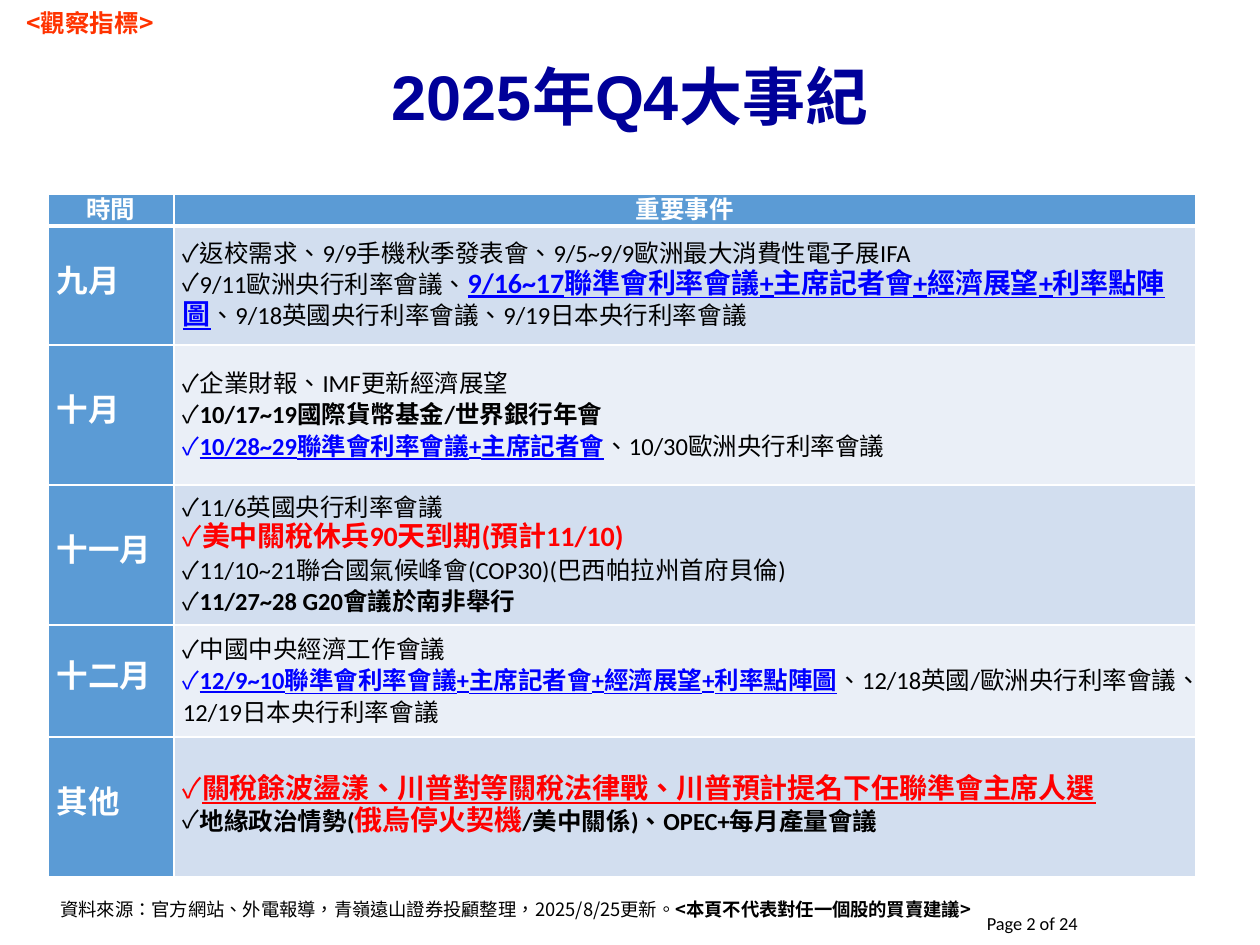
from lxml.etree import SubElement
from pptx import Presentation
from pptx.dml.color import RGBColor
from pptx.enum.text import MSO_ANCHOR, MSO_AUTO_SIZE, PP_ALIGN
from pptx.oxml import parse_xml
from pptx.oxml.ns import nsdecls, qn
from pptx.util import Emu, Pt

HAN, LATIN = "Noto Sans CJK SC", "Calibri"
WHITE, BLACK, BLUE, RED = "FFFFFF", "000000", "0000FF", "FF0000"
HEAD, BANDS = "5B9BD5", ("D2DEEF", "EAEFF7")

# Run looks: size, colour, bold, underline, font
LOOKS = {
    "plain": (14, BLACK, False, False, LATIN),
    "bold": (14, BLACK, True, False, LATIN),
    "blue": (14, BLUE, True, True, LATIN),
    "big blue": (16, BLUE, True, True, LATIN),
    "red": (16, RED, True, False, LATIN),
    "red line": (16, RED, True, True, LATIN),
    "head": (14, WHITE, True, False, HAN),
    "month": (18, WHITE, True, False, HAN),
    "title": (36, "000099", True, False, "Arial"),
    "tag": (14, "FF3300", True, False, HAN),
    "note": (10.5, BLACK, False, False, HAN),
    "note bold": (10.5, BLACK, True, False, HAN),
    "page": (10.5, BLACK, False, False, LATIN),
}

# Each month: name, row height, lines made of (text, look) runs
MONTHS = [
    ("九月", 119, [
        [("返校需求、9/9手機秋季發表會、9/5~9/9歐洲最大消費性電子展IFA", "plain")],
        [("9/11歐洲央行利率會議、", "plain"),
         ("9/16~17聯準會利率會議+主席記者會+經濟展望+利率點陣圖", "big blue"),
         ("、9/18英國央行利率會議、9/19日本央行利率會議", "plain")],
    ]),
    ("十月", 140, [
        [("企業財報、IMF更新經濟展望", "plain")],
        [("10/17~19國際貨幣基金/世界銀行年會", "bold")],
        [("10/28~29聯準會利率會議+主席記者會", "blue"),
         ("、10/30歐洲央行利率會議", "plain")],
    ]),
    ("十一月", 140, [
        [("11/6英國央行利率會議", "plain")],
        [("美中關稅休兵90天到期(預計11/10)", "red")],
        [("11/10~21聯合國氣候峰會(COP30)(巴西帕拉州首府貝倫)", "plain")],
        [("11/27~28 G20會議於南非舉行", "bold")],
    ]),
    ("十二月", 112, [
        [("中國中央經濟工作會議", "plain")],
        [("12/9~10聯準會利率會議+主席記者會+經濟展望+利率點陣圖", "blue"),
         ("、12/18英國/歐洲央行利率會議、12/19日本央行利率會議", "plain")],
    ]),
    ("其他", 140, [
        [("關稅餘波盪漾、川普對等關稅法律戰、川普預計提名下任聯準會主席人選", "red line")],
        [("地緣政治情勢(", "bold"), ("俄烏停火契機", "red"),
         ("/美中關係)、OPEC+每月產量會議", "bold")],
    ]),
]


def px(n):
    return Emu(round(n * 914400 / 126))


def tint(code):
    return RGBColor.from_string(code)


class Deck:
    def __init__(self):
        self.file = Presentation()
        self.file.slide_width, self.file.slide_height = px(1260), px(945)
        self.slide = self.file.slides.add_slide(self.file.slide_layouts[6])

    def runs(self, para, parts):
        for text, look in parts:
            size, code, bold, line, face = LOOKS[look]
            run = para.add_run()
            run.text = text
            font = run.font
            font.size, font.bold, font.underline = Pt(size), bold, line
            font.color.rgb = tint(code)
            font.name = face
            props = run._r.get_or_add_rPr()
            props.set("lang", "zh-TW")
            SubElement(props, qn("a:ea"), typeface=HAN)

    def text(self, x, y, w, h, parts, align=PP_ALIGN.LEFT,
             anchor=MSO_ANCHOR.TOP, wrap=True, grow=False, space=None):
        frame = self.slide.shapes.add_textbox(px(x), px(y), px(w), px(h)).text_frame
        frame.word_wrap, frame.vertical_anchor = wrap, anchor
        if grow:
            frame.auto_size = MSO_AUTO_SIZE.SHAPE_TO_FIT_TEXT
        para = frame.paragraphs[0]
        para.alignment, para.line_spacing = align, space
        self.runs(para, parts)

    def edges(self, cell, top, low):
        props = cell._tc.get_or_add_tcPr()
        for side, width in zip("LRTB", (1, 1, top, low)):
            props.append(parse_xml(
                f'<a:ln{side} {nsdecls("a")} w="{Pt(width)}"><a:solidFill>'
                f'<a:srgbClr val="{WHITE}"/></a:solidFill></a:ln{side}>'))

    def cell(self, cell, lines, fill, align=PP_ALIGN.LEFT, tick=False, top=1, low=1):
        self.edges(cell, top, low)
        cell.fill.solid()
        cell.fill.fore_color.rgb = tint(fill)
        cell.vertical_anchor = MSO_ANCHOR.MIDDLE
        cell.margin_left = cell.margin_right = px(9)
        cell.margin_top = cell.margin_bottom = 0
        frame = cell.text_frame
        for i, parts in enumerate(lines):
            para = frame.add_paragraph() if i else frame.paragraphs[0]
            para.alignment, para.line_spacing = align, Pt(18)
            if tick:
                props = para._p.get_or_add_pPr()
                props.set("marL", "0")
                props.set("indent", str(-px(49)))
                SubElement(props, qn("a:buFont"), typeface=HAN)
                SubElement(props, qn("a:buChar"), char="✓")
            self.runs(para, parts)

    def table(self, x, y, cols, rows):
        grid = self.slide.shapes.add_table(
            len(rows), len(cols), px(x), px(y), px(sum(cols)), px(sum(rows))).table
        for col, w in zip(grid.columns, cols):
            col.width = px(w)
        for row, h in zip(grid.rows, rows):
            row.height = px(h)
        return grid


def main():
    deck = Deck()

    # Page number, title, source note and corner tag
    deck.text(806, 898, 284, 50, [("Page 2 of 24", "page")],
              PP_ALIGN.RIGHT, MSO_ANCHOR.MIDDLE)
    deck.text(63, 38, 1134, 125, [("2025年Q4大事紀", "title")],
              PP_ALIGN.CENTER, MSO_ANCHOR.MIDDLE, space=0.9)
    deck.text(48, 892, 978, 35, [
        ("資料來源：官方網站、外電報導，青嶺遠山證券投顧整理，2025/8/25更新。", "note"),
        ("<本頁不代表對任一個股的買賣建議>", "note bold")], grow=True)
    deck.text(6, 2, 168, 43, [("<觀察指標>", "tag")],
              PP_ALIGN.CENTER, wrap=False, grow=True)

    # Event table
    grid = deck.table(48, 194, (126, 1022), [32] + [h for _, h, _ in MONTHS])
    for c, name in enumerate(("時間", "重要事件")):
        deck.cell(grid.cell(0, c), [[(name, "head")]], HEAD, PP_ALIGN.CENTER, low=3)
    for r, (name, _, lines) in enumerate(MONTHS, 1):
        top = 3 if r == 1 else 1
        deck.cell(grid.cell(r, 0), [[(name, "month")]], HEAD, top=top)
        deck.cell(grid.cell(r, 1), lines, BANDS[(r - 1) % 2], tick=True, top=top)

    deck.file.save("out.pptx")


if __name__ == "__main__":
    main()
